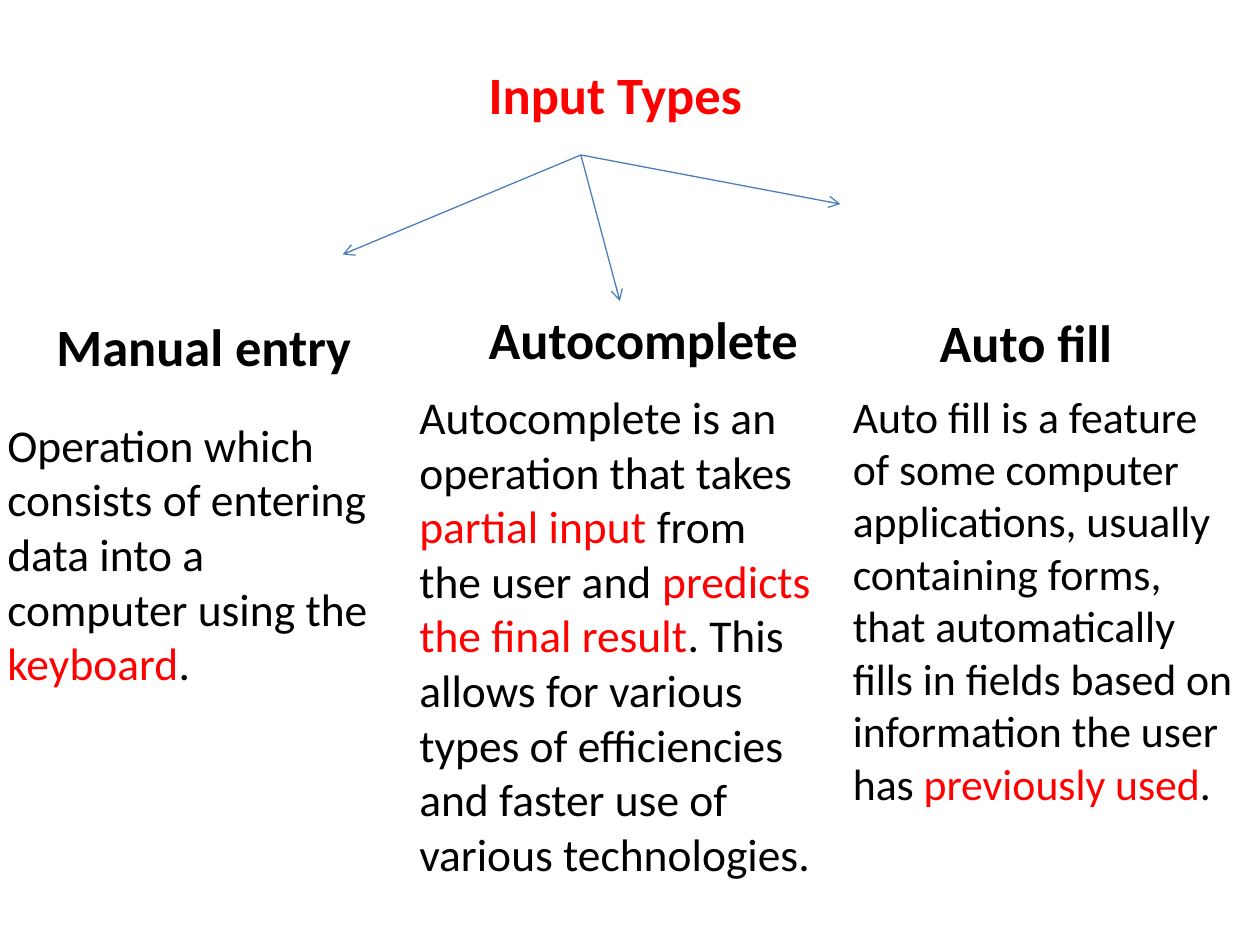
from lxml import etree
from pptx import Presentation
from pptx.dml.color import RGBColor
from pptx.enum import shapes, text
from pptx.oxml import ns
from pptx.util import Inches, Pt

RED = RGBColor(0xFF, 0x00, 0x00)
BLACK = RGBColor(0x00, 0x00, 0x00)
ARROW_BLUE = RGBColor(0x4B, 0x7E, 0xBC)

deck = Presentation()
deck.slide_width, deck.slide_height = Inches(10), Inches(7.5)
slide = deck.slides.add_slide(deck.slide_layouts[6])


def add_text(*phrases, box, size, bold=False, colors=(BLACK, RED)):
    """Place one paragraph whose phrases alternate between the colors."""
    frame = slide.shapes.add_textbox(*map(Inches, box)).text_frame
    frame.word_wrap = True
    frame.auto_size = text.MSO_AUTO_SIZE.SHAPE_TO_FIT_TEXT
    for i, phrase in enumerate(phrases):
        run = frame.paragraphs[0].add_run()
        run.text = phrase
        run.font.name = "Calibri"
        run.font.size = Pt(size)
        run.font.bold = bold
        run.font.color.rgb = colors[i % len(colors)]


# Title and the headings of the three input types
add_text("Input Types", box=(3.78, 0.44, 2.28, 0.61), size=30, bold=True, colors=(RED,))
for heading, left, top, width in (
    ("Manual entry", 0.35, 2.44, 2.83),
    ("Autocomplete", 3.78, 2.39, 2.9),
    ("Auto fill", 7.36, 2.41, 1.71),
):
    add_text(heading, box=(left, top, width, 0.61), size=30, bold=True)

# Arrows fanning out from the title
fan_origin = (4.61, 1.23)
for tip in ((2.72, 2.02), (4.92, 2.39), (6.67, 1.62)):
    arrow = slide.shapes.add_connector(
        shapes.MSO_CONNECTOR.STRAIGHT, *map(Inches, fan_origin + tip))
    arrow.line.color.rgb = ARROW_BLUE
    arrow.line.width = Pt(0.75)
    etree.SubElement(arrow.line._get_or_add_ln(), ns.qn("a:tailEnd"), type="arrow")
    etree.SubElement(arrow._element.spPr, ns.qn("a:effectLst"))

# Descriptions, with key phrases in red
add_text("Operation which consists of entering data into a computer using the ",
         "keyboard", ".",
         box=(-0.04, 3.26, 3.27, 2.73), size=26)
add_text("Autocomplete is an operation that takes ", "partial input ",
         "from the user and ", "predicts the final result",
         ". This allows for various types of efficiencies and faster use of "
         "various technologies.",
         box=(3.23, 3.04, 3.34, 4.04), size=26)
add_text("Auto fill is a feature of some computer applications, usually containing "
         "forms, that automatically fills in fields based on information the user has ",
         "previously used", ".",
         box=(6.67, 3.04, 3.21, 4.31), size=25)

deck.save("out.pptx")
